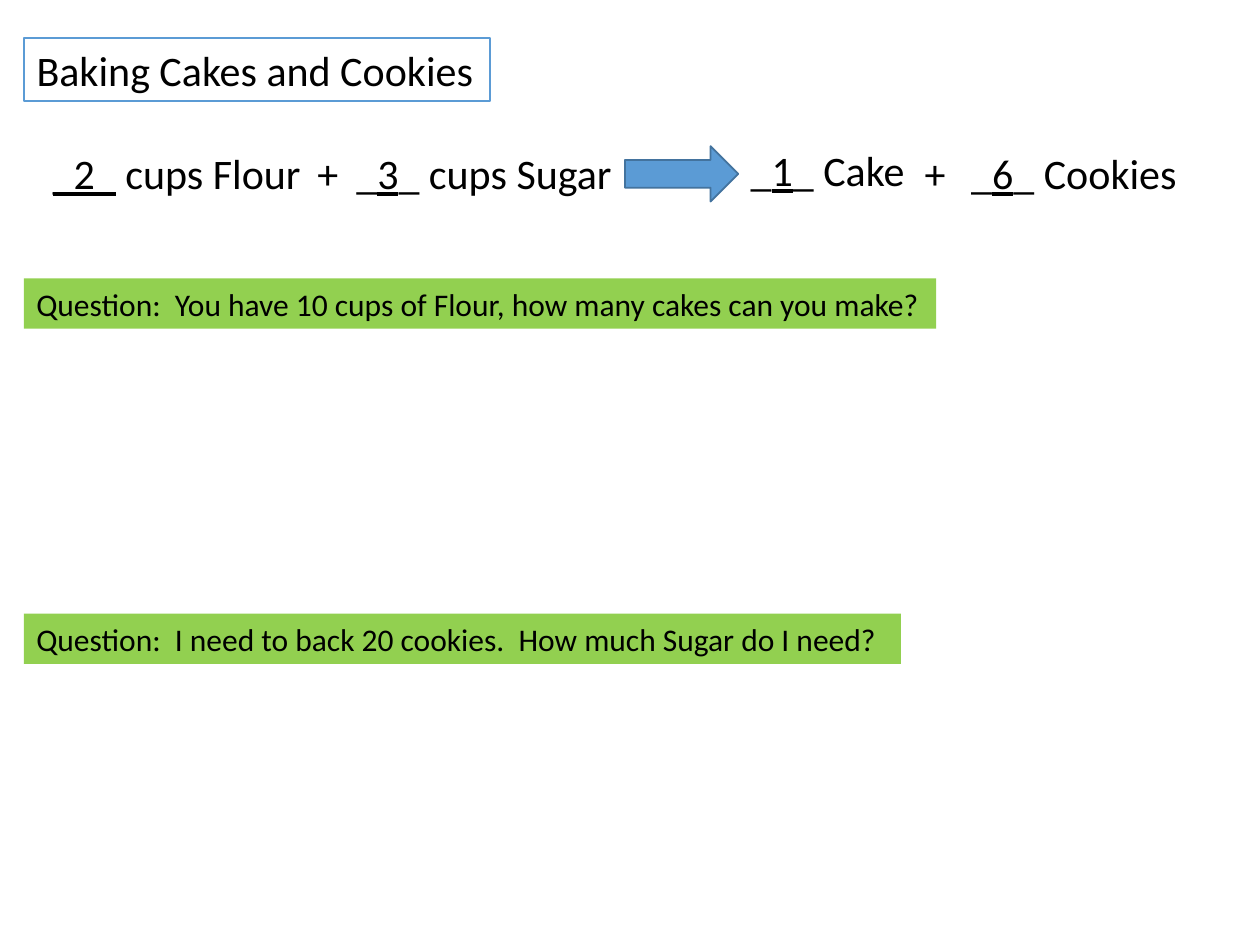
import pptx
import pptx.dml.color
import pptx.enum.shapes
import pptx.enum.text
import pptx.util

BLACK = pptx.dml.color.RGBColor(0x00, 0x00, 0x00)
WHITE = pptx.dml.color.RGBColor(0xFF, 0xFF, 0xFF)
BLUE = pptx.dml.color.RGBColor(0x5B, 0x9B, 0xD5)
DARK_BLUE = pptx.dml.color.RGBColor(0x43, 0x73, 0x9E)
GREEN = pptx.dml.color.RGBColor(0x92, 0xD0, 0x50)

FIT_SHAPE = pptx.enum.text.MSO_AUTO_SIZE.SHAPE_TO_FIT_TEXT
FIXED_SIZE = pptx.enum.text.MSO_AUTO_SIZE.NONE

MARGIN = 0.19
RECIPE_TOP = 1.12
LINE_HEIGHT = 0.5


def inches(*lengths):
    return [pptx.util.Inches(length) for length in lengths]


def write(holder, runs, size=24, font="Calibri", color=BLACK, fit=FIT_SHAPE):
    """Fill a shape with one unwrapped line of (text, underlined) runs."""
    frame = holder.text_frame
    frame.word_wrap = False
    frame.auto_size = fit
    frame.vertical_anchor = pptx.enum.text.MSO_ANCHOR.TOP
    line = frame.paragraphs[0]
    line.alignment = pptx.enum.text.PP_ALIGN.LEFT
    for text, underlined in runs:
        run = line.add_run()
        run.text = text
        run.font.size = pptx.util.Pt(size)
        run.font.name = font
        run.font.color.rgb = color
        run.font.underline = underlined


def outline(shape, color):
    shape.line.color.rgb = color
    shape.line.width = pptx.util.Pt(1)


def add_title(slide, text):
    """Format the title at a fixed size, since a placeholder grows too tall."""
    title = slide.shapes.title
    title.left, title.top, title.width, title.height = inches(
        MARGIN, 0.3, 3.7, LINE_HEIGHT)
    title.fill.solid()
    title.fill.fore_color.rgb = WHITE
    outline(title, BLUE)
    write(title, [(text, False)], fit=FIXED_SIZE)


def add_term(recipe, left, width, runs, top=RECIPE_TOP):
    term = recipe.shapes.add_textbox(*inches(left, top, width, LINE_HEIGHT))
    write(term, runs)


def add_filled(shapes, preset, box, color):
    shape = shapes.add_shape(preset, *inches(*box))
    shape.shadow.inherit = False
    shape.fill.solid()
    shape.fill.fore_color.rgb = color
    shape.line.fill.background()
    return shape


def amount(number, ingredient):
    return [("_", False), (number, True), ("_ " + ingredient, False)]


def add_recipe(slide):
    recipe = slide.shapes.add_group_shape()
    add_term(recipe, 0.32, 2.19, [("_2_", True), (" cups Flour", False)])
    add_term(recipe, 2.73, 2.25, amount("3", "cups Sugar"))
    add_term(recipe, 5.86, 1.43, amount("1", "Cake"), top=1.1)
    add_term(recipe, 7.61, 1.85, amount("6", "Cookies"))
    for plus_left in (2.42, 7.24):
        add_term(recipe, plus_left, 0.37, [("+", False)])
    yields = add_filled(recipe.shapes, pptx.enum.shapes.MSO_SHAPE.RIGHT_ARROW,
                        (4.96, 1.16, 0.9, 0.44), BLUE)
    outline(yields, DARK_BLUE)


def add_question(slide, top, width, text):
    question = add_filled(slide.shapes, pptx.enum.shapes.MSO_SHAPE.RECTANGLE,
                          (MARGIN, top, width, 0.4), GREEN)
    write(question, [("Question:  " + text, False)], size=18)


def main():
    deck = pptx.Presentation()
    deck.slide_width, deck.slide_height = inches(10, 7.5)
    slide = deck.slides.add_slide(deck.slide_layouts.get_by_name("Title Only"))
    add_recipe(slide)
    add_title(slide, "Baking Cakes and Cookies")
    add_question(slide, 2.21, 7.24,
                 "You have 10 cups of Flour, how many cakes can you make?")
    add_question(slide, 4.87, 6.96,
                 "I need to back 20 cookies.  How much Sugar do I need?")
    deck.save("out.pptx")


if __name__ == "__main__":
    main()
